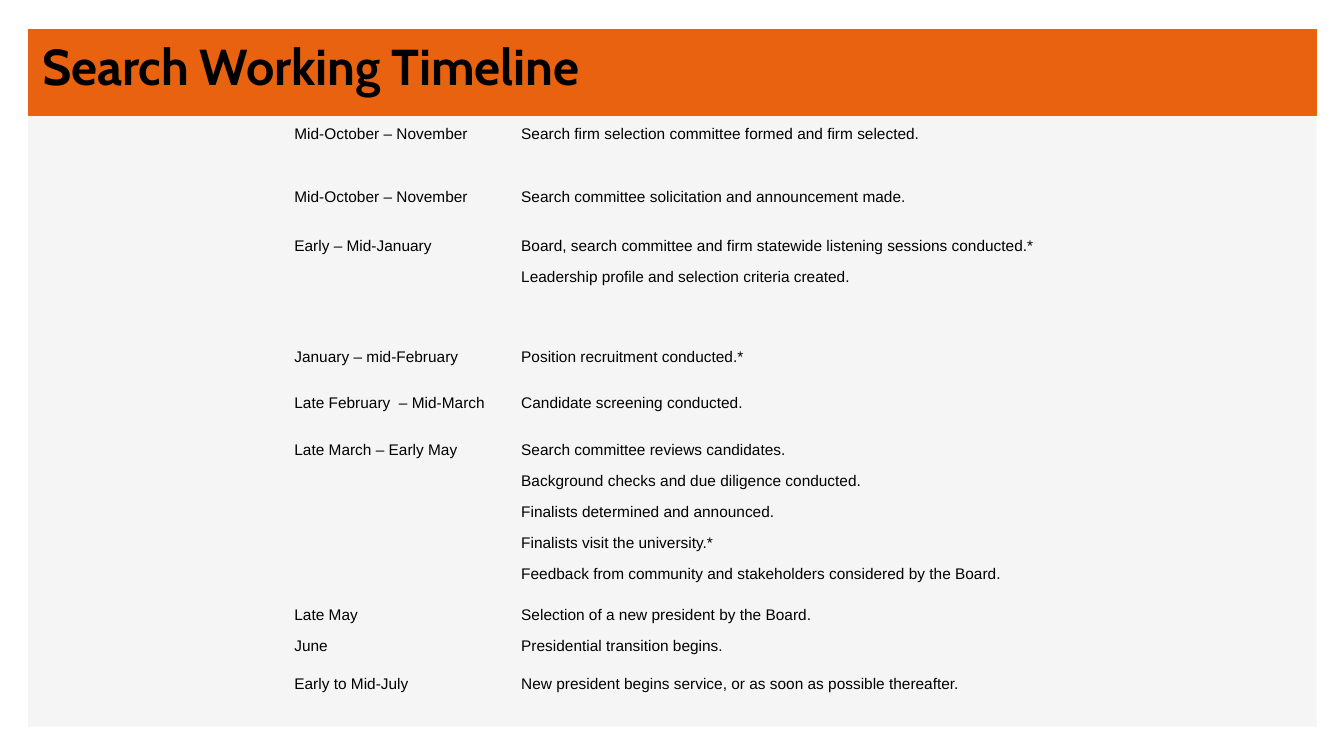
import dataclasses

import pptx
import pptx.dml.color
import pptx.enum.shapes
import pptx.enum.text
import pptx.oxml.ns
import pptx.util

Inches = pptx.util.Inches
Pt = pptx.util.Pt
Color = pptx.dml.color.RGBColor


@dataclasses.dataclass(frozen=True)
class Theme:
    ink: Color = Color.from_string("000000")
    accent: Color = Color.from_string("E9620F")
    panel: Color = Color.from_string("F5F5F5")
    title_font: str = "Cabin"
    body_font: str = "Arial"
    title_size: int = 36
    body_size: int = 11


THEME = Theme()
PLAIN_TABLE_STYLE = "{2D5ABB26-0587-4C30-8999-92F81FD0307C}"
COLUMN_WIDTHS = (2.25, 5.42)

# Row height in inches, period, milestones
TIMELINE = [
    (0.62, "Mid-October – November",
     ["Search firm selection committee formed and firm selected."]),
    (0.49, "Mid-October – November",
     ["Search committee solicitation and announcement made."]),
    (1.1, "Early – Mid-January",
     ["Board, search committee and firm statewide listening sessions conducted.*",
      "Leadership profile and selection criteria created."]),
    (0.46, "January – mid-February", ["Position recruitment conducted.*"]),
    (0.46, "Late February  – Mid-March", ["Candidate screening conducted."]),
    (1.64, "Late March – Early May",
     ["Search committee reviews candidates.",
      "Background checks and due diligence conducted.",
      "Finalists determined and announced.",
      "Finalists visit the university.*",
      "Feedback from community and stakeholders considered by the Board."]),
    (0.31, "Late May", ["Selection of a new president by the Board."]),
    (0.37, "June", ["Presidential transition begins."]),
    (0.46, "Early to Mid-July",
     ["New president begins service, or as soon as possible thereafter."]),
]


def apply(target, values):
    """Set each named attribute of target."""
    for name, value in values.items():
        setattr(target, name, value)


def place(shape, left, top, width, height):
    apply(shape, {"left": Inches(left), "top": Inches(top),
                  "width": Inches(width), "height": Inches(height)})


def write(para, text, font, size, bold=False):
    span = para.add_run()
    span.text = text
    apply(span.font, {"name": font, "size": Pt(size), "bold": bold})
    span.font.color.rgb = THEME.ink
    return span


def add_panel(page, left, top, width, height, fill, outlined=False):
    panel = page.shapes.add_shape(
        pptx.enum.shapes.MSO_SHAPE.RECTANGLE,
        Inches(left), Inches(top), Inches(width), Inches(height))
    panel.shadow.inherit = False
    panel.fill.solid()
    panel.fill.fore_color.rgb = fill
    if outlined:
        panel.line.color.rgb = fill
        panel.line.width = Pt(1)
    else:
        panel.line.fill.background()


def set_title(page, text):
    """Format the title placeholder and bring it in front of the panels."""
    title = page.shapes.title
    place(title, 0.41, 0.34, 8.11, 0.62)
    frame = title.text_frame
    apply(frame, {
        "margin_left": Inches(0.01), "margin_top": Inches(0.01),
        "margin_right": 0, "margin_bottom": 0, "word_wrap": True,
        "vertical_anchor": pptx.enum.text.MSO_ANCHOR.TOP,
        "auto_size": pptx.enum.text.MSO_AUTO_SIZE.SHAPE_TO_FIT_TEXT})
    para = frame.paragraphs[0]
    apply(para, {"alignment": pptx.enum.text.PP_ALIGN.LEFT,
                 "space_before": Pt(1), "line_spacing": 1.0})
    span = write(para, text, THEME.title_font, THEME.title_size, bold=True)
    span.font.element.set("spc", "-10") if hasattr(span.font, "element") \
        else span._r.get_or_add_rPr().set("spc", "-10")
    page.shapes.element.append(title.element)


def fill_cell(cell, lines):
    cell.fill.background()
    apply(cell, {"margin_left": Inches(0.09), "margin_right": Inches(0.03),
                 "margin_top": 0, "margin_bottom": 0})
    frame = cell.text_frame
    for index, line in enumerate(lines):
        para = frame.add_paragraph() if index else frame.paragraphs[0]
        para.space_after = Pt(10)
        write(para, line, THEME.body_font, THEME.body_size)


def add_timeline(page, left, top):
    height = sum(row[0] for row in TIMELINE)
    holder = page.shapes.add_table(
        len(TIMELINE), len(COLUMN_WIDTHS), Inches(left), Inches(top),
        Inches(sum(COLUMN_WIDTHS)), Inches(height))
    table = holder.table
    apply(table, {"first_row": False, "horz_banding": False})
    style = next(holder.element.iter(pptx.oxml.ns.qn("a:tableStyleId")))
    style.text = PLAIN_TABLE_STYLE
    for column, width in zip(table.columns, COLUMN_WIDTHS):
        column.width = Inches(width)
    for row, (row_height, period, milestones) in zip(table.rows, TIMELINE):
        row.height = Inches(row_height)
        fill_cell(row.cells[0], [period])
        fill_cell(row.cells[1], milestones)


def main():
    deck = pptx.Presentation()
    apply(deck, {"slide_width": Inches(13.33), "slide_height": Inches(7.5)})
    page = deck.slides.add_slide(deck.slide_layouts.get_by_name("Title Only"))
    add_panel(page, 0.28, 1.13, 12.78, 6.08, THEME.panel)
    add_panel(page, 0.28, 0.29, 12.78, 0.85, THEME.accent, outlined=True)
    set_title(page, "Search Working Timeline")
    add_timeline(page, 2.83, 1.25)
    deck.save("out.pptx")


if __name__ == "__main__":
    main()
